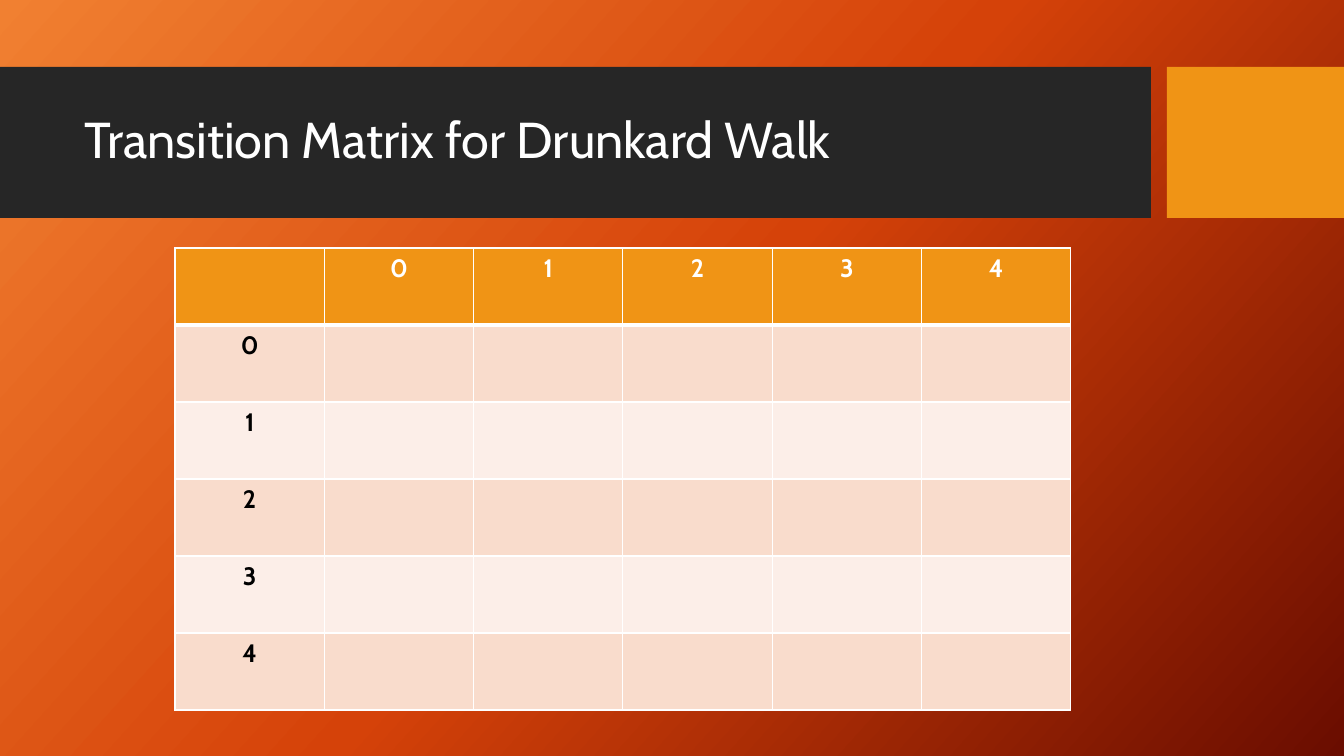
from copy import deepcopy

from lxml import etree
from pptx import Presentation
from pptx import util as u
from pptx.dml.color import RGBColor
from pptx.enum import shapes, text
from pptx.oxml import ns

SCALE = 12192000 / 1344
FONT = "Cabin"
WHITE = "FFFFFF"
ORANGE = "F09415"
STATES = ["0", "1", "2", "3", "4"]
BANDS = ["F9DCCC", "FCEEE8"]


def px(length):
    return u.Emu(round(length * SCALE))


def color(value):
    return RGBColor.from_string(value)


def write(frame, words, size=18, ink=WHITE, bold=False,
          align=text.PP_ALIGN.LEFT, spacing=1.0):
    paragraph = frame.paragraphs[0]
    paragraph.alignment = align
    paragraph.line_spacing = spacing
    run = paragraph.add_run()
    run.text = words
    run.font.name = FONT
    run.font.size = u.Pt(size)
    run.font.bold = bold
    run.font.color.rgb = color(ink)


def paint_background(slide, stops, angle):
    fill = slide.background.fill
    fill.gradient()
    fill.gradient_angle = 360 - angle
    stop_list = slide.element.find(".//" + ns.qn("a:gsLst"))
    stop_list.append(deepcopy(stop_list[0]))
    for stop, (position, shade) in zip(fill.gradient_stops, stops):
        stop.position = position
        stop.color.rgb = color(shade)


def add_block(slide, left, top, width, height, shade):
    block = slide.shapes.add_shape(shapes.MSO_SHAPE.RECTANGLE,
                                   px(left), px(top), px(width), px(height))
    block.shadow.inherit = False
    block.fill.solid()
    block.fill.fore_color.rgb = color(shade)
    block.line.fill.background()


def add_title(slide, words):
    title = slide.shapes.add_textbox(px(75), px(83), px(1059), px(119))
    title.text_frame.word_wrap = True
    title.text_frame.vertical_anchor = text.MSO_ANCHOR.MIDDLE
    write(title.text_frame, words, size=36, spacing=0.9)


def add_borders(cell, **widths):
    properties = cell._tc.get_or_add_tcPr()
    for side in "LRTB":
        border = etree.SubElement(properties, ns.qn("a:ln" + side),
                                  w=str(u.Pt(widths.get(side, 1))))
        solid = etree.SubElement(border, ns.qn("a:solidFill"))
        etree.SubElement(solid, ns.qn("a:srgbClr"), val=WHITE)


def style_cell(cell, shade, **widths):
    add_borders(cell, **widths)
    cell.fill.solid()
    cell.fill.fore_color.rgb = color(shade)


def add_matrix(slide, left, top, width, height):
    count = len(STATES) + 1
    matrix = slide.shapes.add_table(count, count, px(left), px(top),
                                    px(width), px(height)).table
    matrix.horz_banding = False
    for row in range(count):
        for column in range(count):
            cell = matrix.cell(row, column)
            if row == 0:
                style_cell(cell, ORANGE, B=3)
            else:
                style_cell(cell, BANDS[(row - 1) % 2], T=3 if row == 1 else 1)
    for index, state in enumerate(STATES, 1):
        for cell, ink in ((matrix.cell(0, index), WHITE),
                          (matrix.cell(index, 0), "000000")):
            write(cell.text_frame, state, ink=ink, bold=True,
                  align=text.PP_ALIGN.CENTER)


def main():
    deck = Presentation()
    deck.slide_width, deck.slide_height = px(1344), px(756)
    slide = deck.slides.add_slide(deck.slide_layouts[6])
    paint_background(slide, [(0, "F18031"), (0.5, "D54209"), (1, "6A0D00")], 42)
    add_block(slide, 0, 67, 1151, 151, "262626")
    add_block(slide, 1167, 67, 177, 151, ORANGE)
    add_title(slide, "Transition Matrix for Drunkard Walk")
    add_matrix(slide, 175, 248, 896, 462)
    deck.save("out.pptx")


if __name__ == "__main__":
    main()
